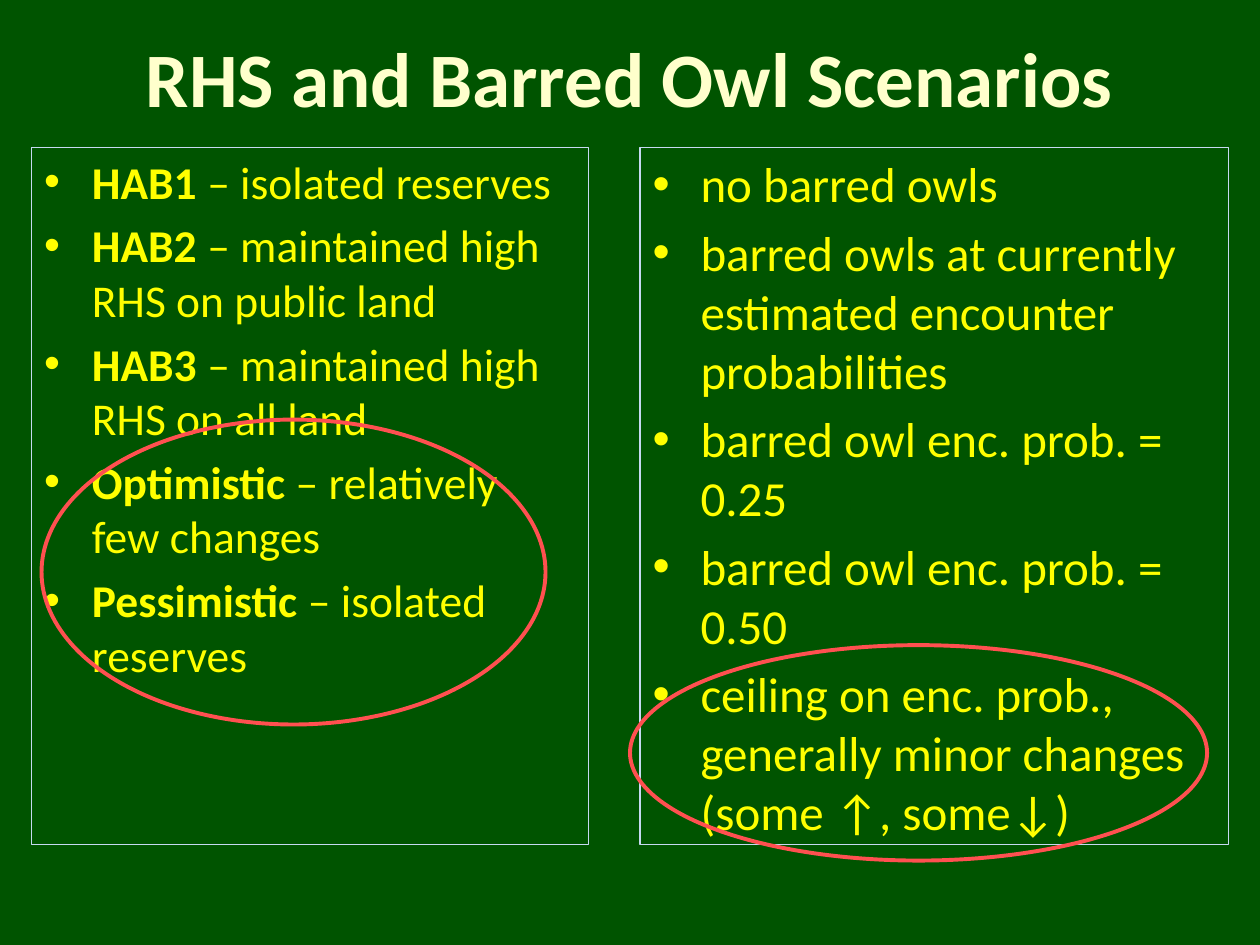
import pptx
import pptx.dml.color
import pptx.enum.shapes
import pptx.enum.text
import pptx.oxml
import pptx.oxml.ns
import pptx.util
from pptx.util import Inches

BACKGROUND, CREAM, YELLOW = "005400", "FFFFCC", "FFFF00"
PALE_BLUE, CORAL = "C6D9F1", "FF5050"

HABITAT_SCENARIOS = [
    ("HAB1", " – isolated reserves"),
    ("HAB2", " – maintained high RHS on public land"),
    ("HAB3", " – maintained high RHS on all land"),
    ("Optimistic", " – relatively few changes"),
    ("Pessimistic", " – isolated reserves"),
]
BARRED_OWL_SCENARIOS = [
    ("", "no barred owls"),
    ("", "barred owls at currently estimated encounter probabilities"),
    ("", "barred owl enc. prob. = 0.25"),
    ("", "barred owl enc. prob. = 0.50"),
    ("", "ceiling on enc. prob., generally minor changes (some ↑, some↓)"),
]


def color(hex_string):
    """Return the colour for a hex string."""
    return pptx.dml.color.RGBColor.from_string(hex_string)


def apply_format(target, values):
    """Set each attribute of the target from a dict of values."""
    for name, value in values.items():
        setattr(target, name, value)


def set_font(font, size, hex_string, bold=False):
    """Format a font in the typeface of the slide."""
    apply_format(font, {"name": "Calibri", "size": pptx.util.Pt(size), "bold": bold})
    font.color.rgb = color(hex_string)


def place(shape, box):
    """Move a shape to a box of left, top, width and height in inches."""
    sides = ("left", "top", "width", "height")
    apply_format(shape, {side: Inches(length) for side, length in zip(sides, box)})


def set_line(shape, hex_string, width):
    """Give a shape an outline."""
    shape.line.color.rgb = color(hex_string)
    shape.line.width = pptx.util.Pt(width)


def add_bullet(paragraph):
    """Give a paragraph a round bullet with a hanging indent."""
    properties = paragraph._p.get_or_add_pPr()
    properties.set("marL", str(Inches(0.38)))
    properties.set("indent", str(Inches(-0.38)))
    namespace = pptx.oxml.ns.nsdecls("a")
    for markup in (f'<a:buFont {namespace} typeface="Arial"/>',
                   f'<a:buChar {namespace} char="•"/>'):
        properties.append(pptx.oxml.parse_xml(markup))


def fill_title(title, box, text):
    """Place the title and write its text."""
    place(title, box)
    frame = title.text_frame
    frame.text = text
    apply_format(frame, {
        "word_wrap": True,
        "auto_size": pptx.enum.text.MSO_AUTO_SIZE.NONE,
        "vertical_anchor": pptx.enum.text.MSO_ANCHOR.MIDDLE,
    })
    paragraph = frame.paragraphs[0]
    paragraph.alignment = pptx.enum.text.PP_ALIGN.CENTER
    set_font(paragraph.runs[0].font, 44, CREAM, bold=True)


def fill_list(body, box, items, size):
    """Place an outlined list and write its bold terms and descriptions."""
    place(body, box)
    set_line(body, PALE_BLUE, 0.75)
    frame = body.text_frame
    apply_format(frame, {
        "word_wrap": True,
        "auto_size": pptx.enum.text.MSO_AUTO_SIZE.NONE,
        "vertical_anchor": pptx.enum.text.MSO_ANCHOR.TOP,
    })
    for index, (term, description) in enumerate(items):
        paragraph = frame.add_paragraph() if index else frame.paragraphs[0]
        add_bullet(paragraph)
        paragraph.space_before = pptx.util.Pt(0.2 * size if index else 0)
        set_font(paragraph.font, size, YELLOW)
        for text, bold in ((term, True), (description, False)):
            if text:
                run = paragraph.add_run()
                run.text = text
                set_font(run.font, size, YELLOW, bold)


def add_highlight(slide, box):
    """Circle a group of scenarios with an unfilled ellipse."""
    ellipse = slide.shapes.add_shape(
        pptx.enum.shapes.MSO_SHAPE.OVAL, *(Inches(length) for length in box))
    ellipse.shadow.inherit = False
    ellipse.fill.background()
    set_line(ellipse, CORAL, 2.25)


def main():
    """Build and save the scenario slide."""
    presentation = pptx.Presentation()
    apply_format(presentation, {"slide_width": Inches(10), "slide_height": Inches(7.5)})
    slide = presentation.slides.add_slide(
        presentation.slide_layouts.get_by_name("Two Content"))
    slide.background.fill.solid()
    slide.background.fill.fore_color.rgb = color(BACKGROUND)

    fill_title(slide.shapes.title, (0.5, 0.17, 9, 0.87), "RHS and Barred Owl Scenarios")
    fill_list(slide.placeholders[1], (0.25, 1.17, 4.42, 5.53), HABITAT_SCENARIOS, 26)
    fill_list(slide.placeholders[2], (5.08, 1.17, 4.67, 5.53), BARRED_OWL_SCENARIOS, 28)
    for box in ((0.33, 3.33, 4, 2.42), (5, 5.12, 4.58, 1.71)):
        add_highlight(slide, box)
    presentation.save("out.pptx")


if __name__ == "__main__":
    main()
